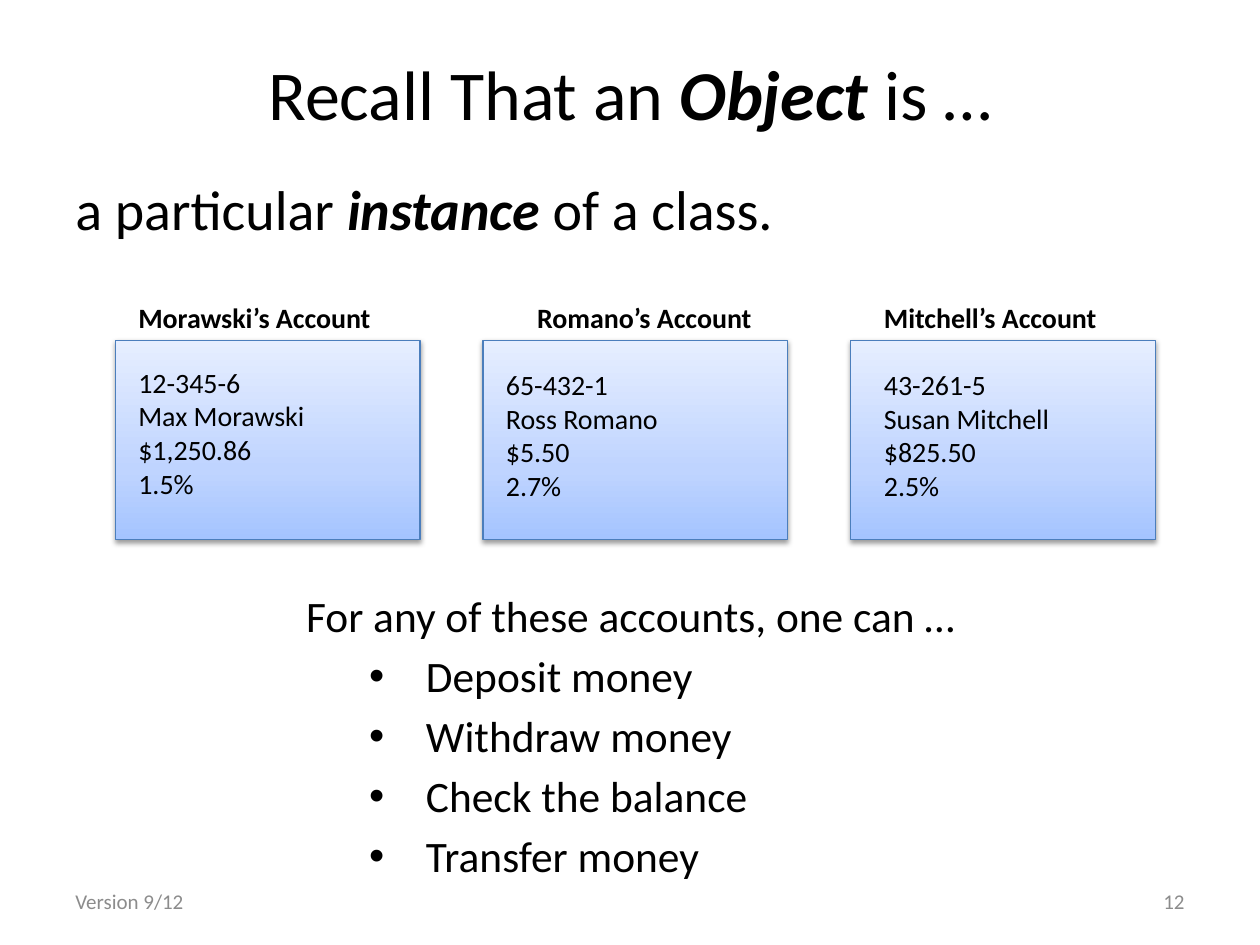
import copy

import pptx
import pptx.util
from lxml import etree
from pptx.dml.color import RGBColor
from pptx.enum.shapes import MSO_SHAPE
from pptx.enum.text import MSO_ANCHOR, PP_ALIGN
from pptx.oxml.ns import qn
from pptx.util import Cm, Pt

COLORS = {"text": "000000", "footer": "8C8C8C", "line": "4B7EBC", "shadow": "000000",
          "bottom": "A4C4FF", "middle": "BFD4FF", "top": "E6EEFF"}


def write(tf, paragraphs, size, color="text", bold=None, align=None, before=0):
    """Fill a text frame; each paragraph is a list of runs, every second run emphasised."""
    tf.word_wrap = True
    for i, runs in enumerate(paragraphs):
        p = tf.paragraphs[0] if i == 0 else tf.add_paragraph()
        p.font.name, p.font.size, p.font.bold = "Calibri", Pt(size), bold
        p.font.color.rgb = RGBColor.from_string(COLORS[color])
        p.alignment, p.space_before = align, Pt(before)
        for j, text in enumerate(runs):
            r = p.add_run()
            r.text = text
            if j % 2:
                r.font.bold = r.font.italic = True


def add_text(x, y, w, h, paragraphs, size, **style):
    tf = s.shapes.add_textbox(Cm(x), Cm(y), Cm(w), Cm(h)).text_frame
    write(tf, paragraphs, size, **style)
    return tf


prs = pptx.Presentation()
prs.slide_width, prs.slide_height = Cm(25.4), Cm(19.05)
s = prs.slides.add_slide(prs.slide_layouts[5])

title = s.shapes.title
title.left, title.top, title.width, title.height = Cm(1.27), Cm(0.76), Cm(22.86), Cm(2.2)
title.text_frame.vertical_anchor = MSO_ANCHOR.MIDDLE
write(title.text_frame, [["Recall That an ", "Object ", "is …"]], 40, align=PP_ALIGN.CENTER)

add_text(1.27, 3.39, 22.86, 1.8, [["a particular ", "instance", " of a class."]], 32)

# Account cards: heading, heading left, details left, details top, details
accounts = [
    ("Morawski’s Account", 2.54, 2.54, 7.24, ["12-345-6", "Max Morawski", "$1,250.86", "1.5%"]),
    ("Romano’s Account", 10.58, 9.95, 7.29, ["65-432-1", "Ross Romano", "$5.50", "2.7%"]),
    ("Mitchell’s Account", 17.57, 17.57, 7.29, ["43-261-5", "Susan Mitchell", "$825.50", "2.5%"]),
]
for i, (heading, heading_x, details_x, details_y, details) in enumerate(accounts):
    add_text(heading_x, 5.93, 5.8, 0.93, [[heading]], 16, bold=True)

    sp = s.shapes.add_shape(MSO_SHAPE.RECTANGLE, Cm(2.33 + 7.41 * i), Cm(6.86), Cm(6.14), Cm(4.02))
    sp.line.color.rgb = RGBColor.from_string(COLORS["line"])
    sp.line.width = Pt(0.75)
    sp.fill.gradient()
    sp.fill.gradient_angle = 90
    first, last = sp.fill.gradient_stops
    first.position, last.position = 0, 1
    first.color.rgb = RGBColor.from_string(COLORS["bottom"])
    last.color.rgb = RGBColor.from_string(COLORS["top"])
    stops = sp._element.spPr.find(".//" + qn("a:gsLst"))
    stops.insert(1, copy.deepcopy(stops[0]))
    middle = sp.fill.gradient_stops[1]
    middle.position = 0.35
    middle.color.rgb = RGBColor.from_string(COLORS["middle"])

    sp.shadow.inherit = False
    effects = sp._element.spPr.find(qn("a:effectLst"))
    shadow = etree.SubElement(effects, qn("a:outerShdw"), blurRad="40000", dist="20000",
                              dir="5400000", rotWithShape="0")
    tint = etree.SubElement(shadow, qn("a:srgbClr"), val=COLORS["shadow"])
    etree.SubElement(tint, qn("a:alpha"), val="38000")

    add_text(details_x, details_y, 4.88, 3.65, [[line] for line in details], 16)

actions = ["Deposit money", "Withdraw money", "Check the balance", "Transfer money"]
tf = add_text(5.92, 11.76, 13.77, 5.72,
              [["For any of these accounts, one can …"]] + [[" " + action] for action in actions],
              24.8, before=4.5)
for p in tf.paragraphs[1:]:
    p.level = 1
    pPr = p._p.get_or_add_pPr()
    pPr.set("marL", str(Cm(2.22)))
    pPr.set("indent", str(-Cm(0.95)))
    bullet_font = etree.Element(qn("a:buFont"), typeface="Arial")
    bullet = etree.Element(qn("a:buChar"), char="•")
    pPr.find(qn("a:spcBef")).addnext(bullet_font)
    bullet_font.addnext(bullet)

for x, text, align in [(1.27, "Version 9/12", PP_ALIGN.LEFT), (18.2, "12", PP_ALIGN.RIGHT)]:
    tf = add_text(x, 17.66, 5.93, 1.01, [[text]], 12, color="footer", align=align)
    tf.vertical_anchor = MSO_ANCHOR.MIDDLE

prs.save("out.pptx")
